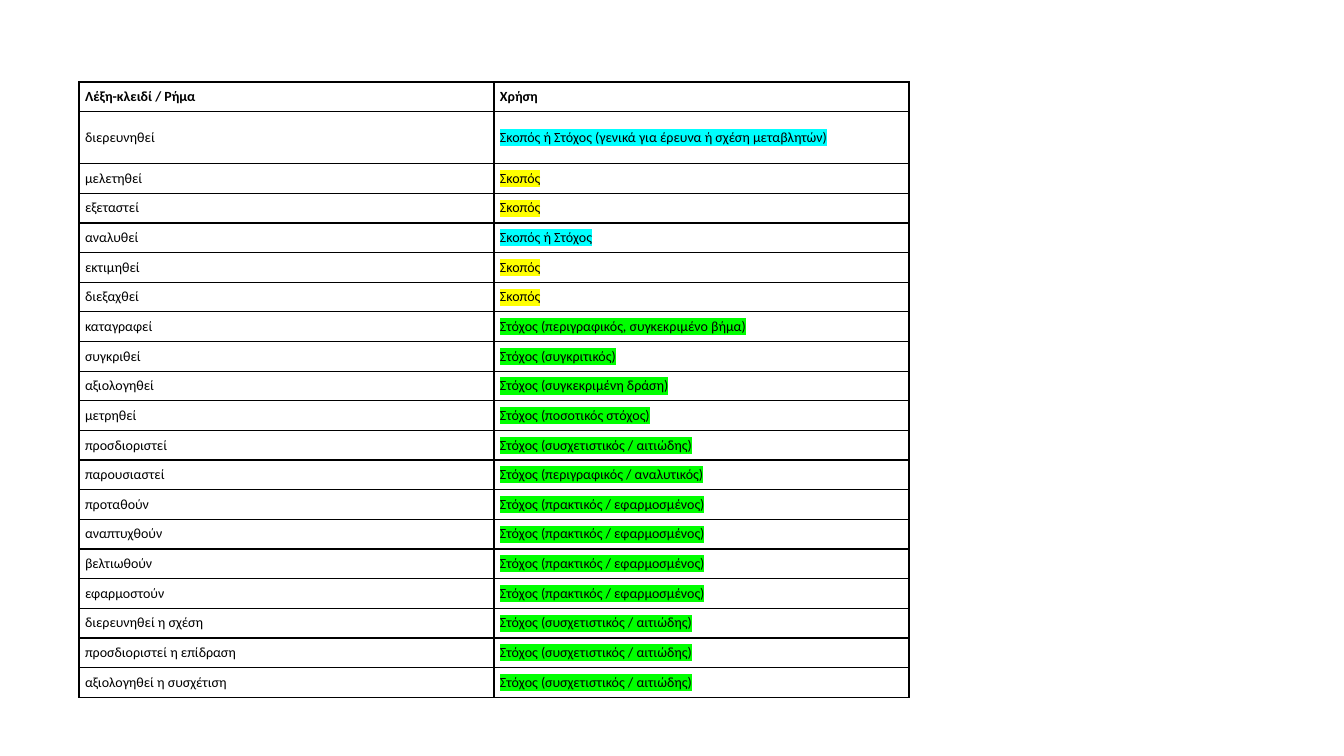
from dataclasses import dataclass

from lxml import etree
from pptx import Presentation
from pptx.dml.color import RGBColor
from pptx.enum.text import MSO_ANCHOR
from pptx.oxml.ns import qn
from pptx.util import Pt

MIDDLE = MSO_ANCHOR.MIDDLE
EMU_PER_PX = 914400 / 100.8


@dataclass(frozen=True)
class Theme:
    font: str = "Calibri"
    text_size: int = 10
    ink: str = "000000"
    border_width: int = 1
    either: str = "00FFFF"
    purpose: str = "FFFF00"
    objective: str = "00FF00"


THEME = Theme()


def px(length):
    return round(length * EMU_PER_PX)


def add_color(parent, tag, color):
    """Add a child that holds an RGB colour and return it."""
    holder = etree.SubElement(parent, qn(tag))
    etree.SubElement(holder, qn("a:srgbClr"), val=color)
    return holder


HEADINGS = ("Λέξη-κλειδί / Ρήμα", "Χρήση")
PRACTICAL = "Στόχος (πρακτικός / εφαρμοσμένος)"
CORRELATIONAL = "Στόχος (συσχετιστικός / αιτιώδης)"
VERB_USES = [
    ("διερευνηθεί", "Σκοπός ή Στόχος (γενικά για έρευνα ή σχέση μεταβλητών)"),
    ("μελετηθεί", "Σκοπός"),
    ("εξεταστεί", "Σκοπός"),
    ("αναλυθεί", "Σκοπός ή Στόχος"),
    ("εκτιμηθεί", "Σκοπός"),
    ("διεξαχθεί", "Σκοπός"),
    ("καταγραφεί", "Στόχος (περιγραφικός, συγκεκριμένο βήμα)"),
    ("συγκριθεί", "Στόχος (συγκριτικός)"),
    ("αξιολογηθεί", "Στόχος (συγκεκριμένη δράση)"),
    ("μετρηθεί", "Στόχος (ποσοτικός στόχος)"),
    ("προσδιοριστεί", CORRELATIONAL),
    ("παρουσιαστεί", "Στόχος (περιγραφικός / αναλυτικός)"),
    ("προταθούν", PRACTICAL),
    ("αναπτυχθούν", PRACTICAL),
    ("βελτιωθούν", PRACTICAL),
    ("εφαρμοστούν", PRACTICAL),
    ("διερευνηθεί η σχέση", CORRELATIONAL),
    ("προσδιοριστεί η επίδραση", CORRELATIONAL),
    ("αξιολογηθεί η συσχέτιση", CORRELATIONAL),
]
ENTRIES = [HEADINGS, *VERB_USES]

LEFT, TOP = 79, 82
COLUMN_WIDTH = 415
TALL_ROW, TALL_HEIGHT = 1, 52
REGULAR_ROWS_HEIGHT = 564
row_height = px(REGULAR_ROWS_HEIGHT) // (len(ENTRIES) - 1)

prs = Presentation()
prs.slide_width, prs.slide_height = px(1344), px(756)
slide = prs.slides.add_slide(prs.slide_layouts[6])

verb_table = slide.shapes.add_table(
    len(ENTRIES), len(HEADINGS), px(LEFT), px(TOP),
    px(COLUMN_WIDTH * len(HEADINGS)), px(REGULAR_ROWS_HEIGHT + TALL_HEIGHT),
).table
verb_table.horz_banding = False
for column in verb_table.columns:
    column.width = px(COLUMN_WIDTH)

for row_index, entry in enumerate(ENTRIES):
    is_tall = row_index == TALL_ROW
    verb_table.rows[row_index].height = px(TALL_HEIGHT) if is_tall else row_height

    for column_index, wording in enumerate(entry):
        cell = verb_table.cell(row_index, column_index)
        cell.vertical_anchor = MIDDLE
        cell.margin_left = cell.margin_right = px(6)
        cell.margin_top = cell.margin_bottom = px(3)
        cell_properties = cell._tc.get_or_add_tcPr()
        for edge in ("a:lnL", "a:lnR", "a:lnT", "a:lnB"):
            border = etree.SubElement(
                cell_properties, qn(edge), w=str(Pt(THEME.border_width)))
            add_color(border, "a:solidFill", THEME.ink)
        cell.fill.background()

        run = cell.text_frame.paragraphs[0].add_run()
        run.text = wording
        run.font.size = Pt(THEME.text_size)
        run.font.bold = row_index == 0
        run.font.color.rgb = RGBColor.from_string(THEME.ink)
        if row_index > 0 and column_index == 1:
            if wording.startswith("Σκοπός ή Στόχος"):
                highlight = THEME.either
            elif wording.startswith("Σκοπός"):
                highlight = THEME.purpose
            else:
                highlight = THEME.objective
            add_color(run._r.get_or_add_rPr(), "a:highlight", highlight)
        run.font.name = THEME.font

prs.save("out.pptx")
